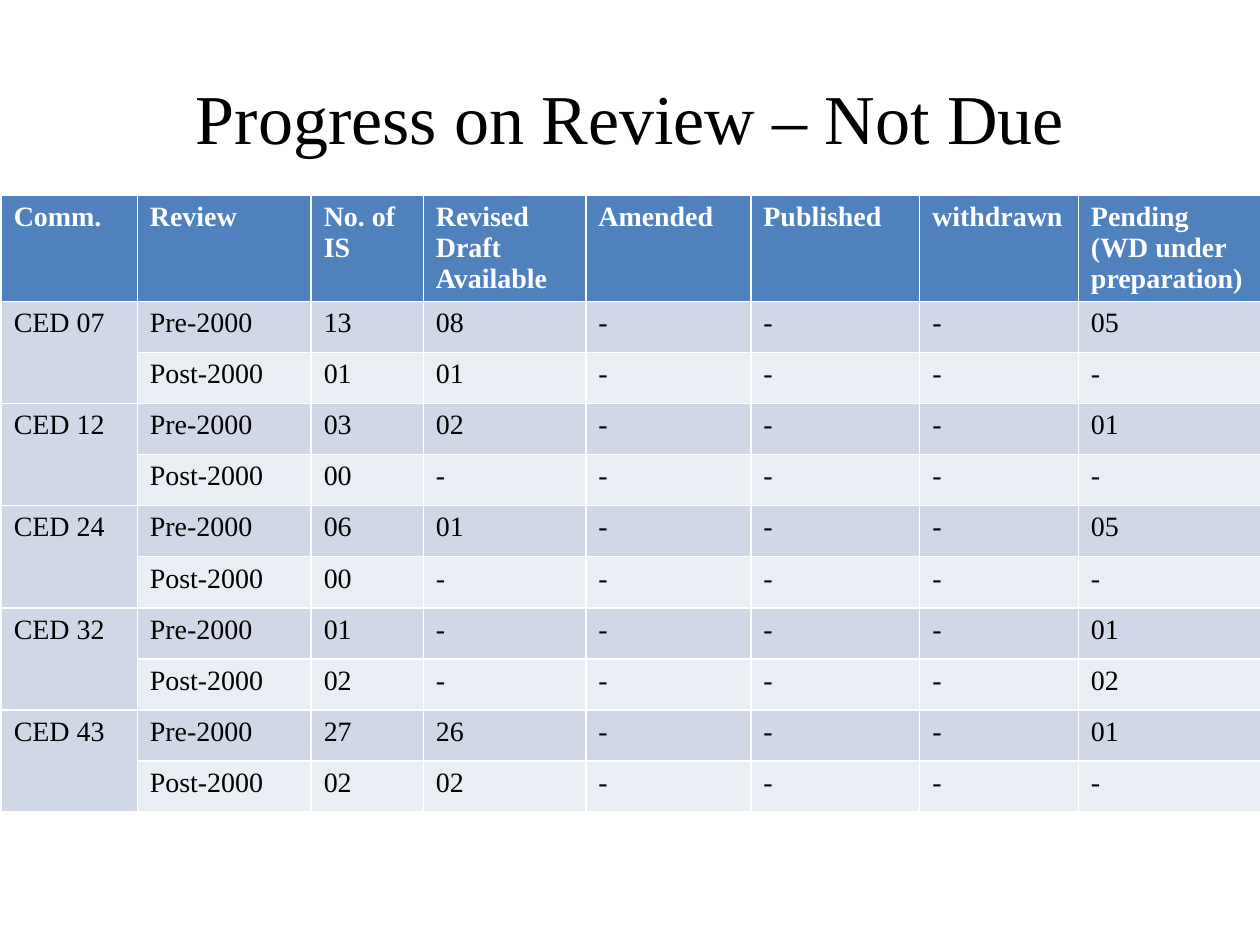
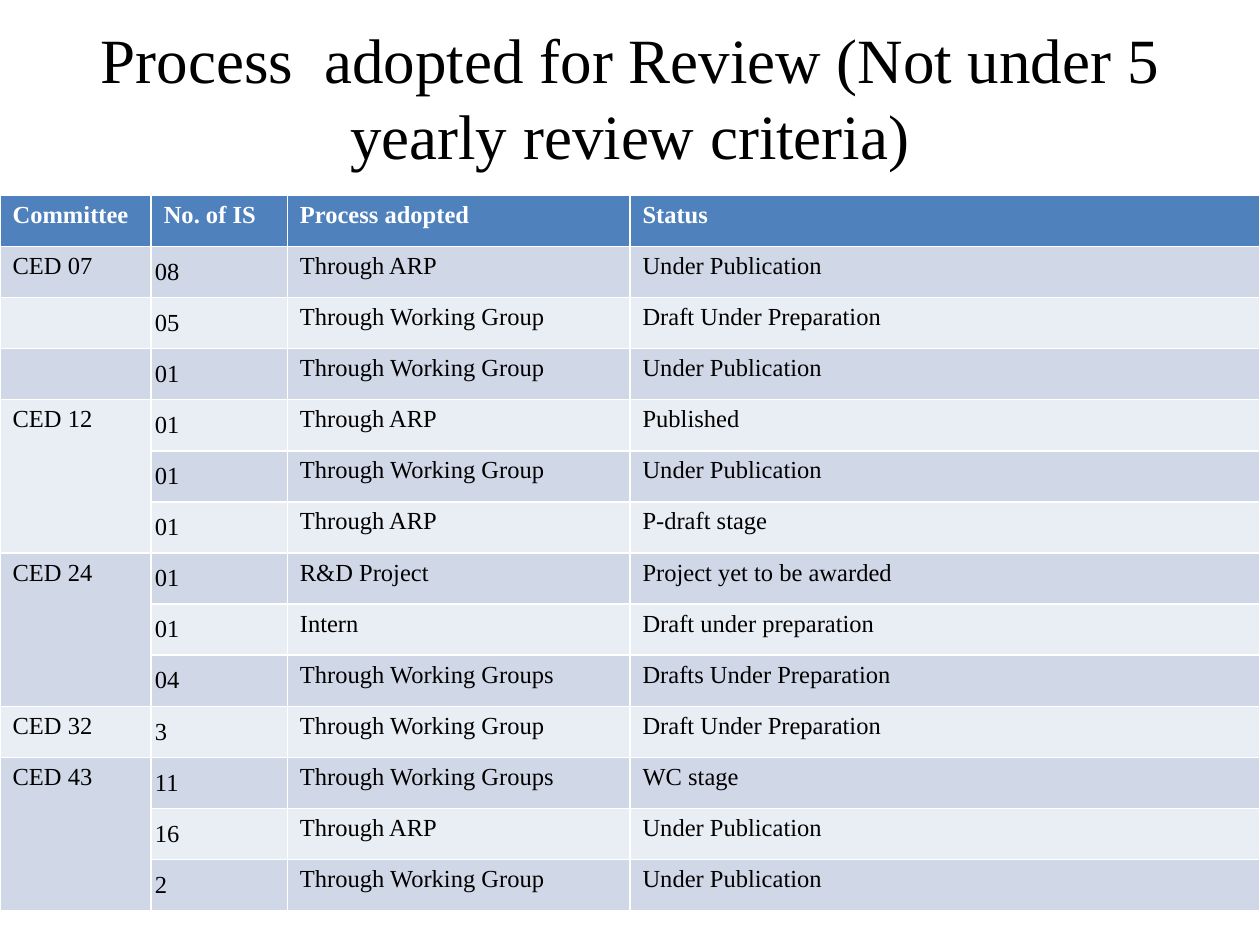
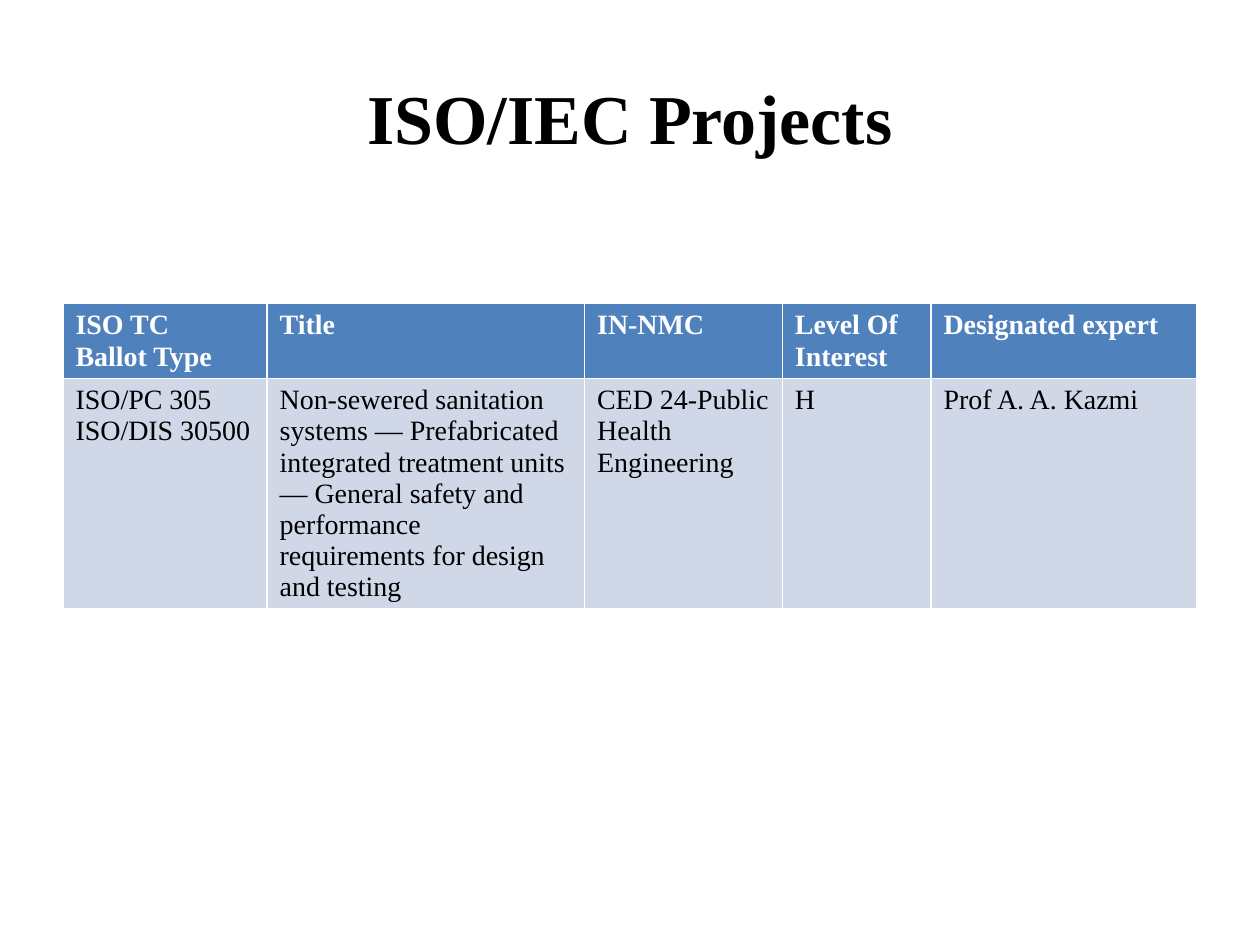
"""Build three slides on the review of standards and on ISO/IEC projects."""
from pptx import Presentation
from pptx.dml.color import RGBColor
from pptx.enum.text import MSO_ANCHOR, PP_ALIGN
from pptx.util import Inches, Pt

MIDDLE = MSO_ANCHOR.MIDDLE
CENTER = PP_ALIGN.CENTER
FONT = "Times New Roman"
BLACK = RGBColor(0x00, 0x00, 0x00)
WHITE = RGBColor(0xFF, 0xFF, 0xFF)
HEADER_BLUE = RGBColor(0x4F, 0x81, 0xBD)
BANDS = (RGBColor(0xD0, 0xD8, 0xE8), RGBColor(0xE9, 0xED, 0xF4))
ROW_HEIGHT = 5.68 / 14
MERGED = None

PROGRESS_HEADER = ["Comm.", "Review", "No. of IS", "Revised Draft Available", "Amended",
                   "Published", "withdrawn", "Pending\n(WD under preparation)"]
# committee: (number, drafts, pending) before 2000, then after 2000
PROGRESS = {
    "CED 07": [("13", "08", "05"), ("01", "01", "-")],
    "CED 12": [("03", "02", "01"), ("00", "-", "-")],
    "CED 24": [("06", "01", "05"), ("00", "-", "-")],
    "CED 32": [("01", "-", "01"), ("02", "-", "02")],
    "CED 43": [("27", "26", "01"), ("02", "02", "-")],
}
PROCESS = [
    ["Committee", "No. of IS", "Process adopted", "Status"],
    ["CED 07", "08", "Through ARP", "Under Publication"],
    ["", "05", "Through Working Group", "Draft Under Preparation"],
    ["", "01", "Through Working Group", "Under Publication"],
    ["CED 12", "01", "Through ARP", "Published"],
    [MERGED, "01", "Through Working Group", "Under Publication"],
    [MERGED, "01", "Through ARP", "P-draft stage"],
    ["CED 24", "01", "R&D Project", "Project yet to be awarded"],
    [MERGED, "01", "Intern", "Draft under preparation"],
    [MERGED, "04", "Through Working Groups", "Drafts Under Preparation"],
    ["CED 32", "3", "Through Working Group", "Draft Under Preparation"],
    ["CED 43", "11", "Through Working Groups", "WC stage"],
    [MERGED, "16", "Through ARP", "Under Publication"],
    [MERGED, "2", "Through Working Group", "Under Publication"],
]
PROJECTS = [
    ["ISO TC\nBallot Type", "Title", "IN-NMC", "Level Of Interest", "Designated expert"],
    ["ISO/PC 305\nISO/DIS 30500",
     "Non-sewered sanitation systems — Prefabricated integrated treatment units — "
     "General safety and performance requirements for design and testing",
     "CED 24-Public Health Engineering", "H", "Prof A. A. Kazmi"],
]


def progress_rows():
    rows = [PROGRESS_HEADER]
    for committee, periods in PROGRESS.items():
        labels = ((committee, "Pre-2000"), (MERGED, "Post-2000"))
        for label, (number, drafts, pending) in zip(labels, periods):
            rows.append([*label, number, drafts, "-", "-", "-", pending])
    return rows


def write(frame, text, size, color, bold=False, align=None):
    for index, line in enumerate(text.split("\n")):
        para = frame.add_paragraph() if index else frame.paragraphs[0]
        para.alignment = align
        if line:
            span = para.add_run()
            span.text = line
            span.font.name = FONT
            span.font.size = Pt(size)
            span.font.bold = bold
            span.font.color.rgb = color


def add_page(deck, title, top, size, bold=False):
    page = deck.slides.add_slide(deck.slide_layouts[5])
    box = page.shapes.title
    box.left, box.top, box.width, box.height = map(Inches, (0.5, top, 9, 1.25))
    box.text_frame.vertical_anchor = MIDDLE
    write(box.text_frame, title, size, BLACK, bold, CENTER)
    return page


def add_grid(page, rows, left, top, widths, heights, size):
    shape = page.shapes.add_table(len(rows), len(widths), Inches(left), Inches(top),
                                  Inches(sum(widths)), Inches(sum(heights)))
    table = shape.table
    for column, width in zip(table.columns, widths):
        column.width = Inches(width)
    for row, height in zip(table.rows, heights):
        row.height = Inches(height)
    for row_index, values in enumerate(rows):
        is_header = row_index == 0
        fill = HEADER_BLUE if is_header else BANDS[(row_index - 1) % 2]
        for column_index, text in enumerate(values):
            cell = table.cell(row_index, column_index)
            cell.fill.solid()
            cell.fill.fore_color.rgb = fill
            if text is not MERGED:
                write(cell.text_frame, text, size, WHITE if is_header else BLACK, is_header)
    merge_down(table, rows)
    return table


def merge_down(table, rows):
    start = 0
    for index, values in enumerate(rows):
        if values[0] is not MERGED:
            start = index
        elif index + 1 == len(rows) or rows[index + 1][0] is not MERGED:
            table.cell(start, 0).merge(table.cell(index, 0))


def main():
    deck = Presentation()
    deck.slide_width, deck.slide_height = Inches(10), Inches(7.5)

    page = add_page(deck, "Progress on Review – Not Due", 0.3, 40)
    rows = progress_rows()
    add_grid(page, rows, 0.01, 1.55, [1.08, 1.38, 0.89, 1.29, 1.31, 1.34, 1.26, 1.46],
             [0.83] + [ROW_HEIGHT] * (len(rows) - 1), 16)

    page = add_page(deck, "Process  adopted for Review (Not under 5 yearly review criteria)", 0.14, 36)
    table = add_grid(page, PROCESS, 0, 1.55, [1.2, 1.08, 2.72, 5],
                     [ROW_HEIGHT] * len(PROCESS), 14)
    for row_index in range(1, len(PROCESS)):
        cell = table.cell(row_index, 1)
        cell.vertical_anchor = MIDDLE
        cell.margin_left = cell.margin_right = Inches(0.03)
        cell.margin_top = cell.margin_bottom = Inches(0.02)

    page = add_page(deck, "ISO/IEC Projects", 0.3, 40, bold=True)
    add_grid(page, PROJECTS, 0.5, 2.41, [1.62, 2.52, 1.57, 1.18, 2.11], [0.58, 1.82], 16)

    deck.save("out.pptx")


if __name__ == "__main__":
    main()
